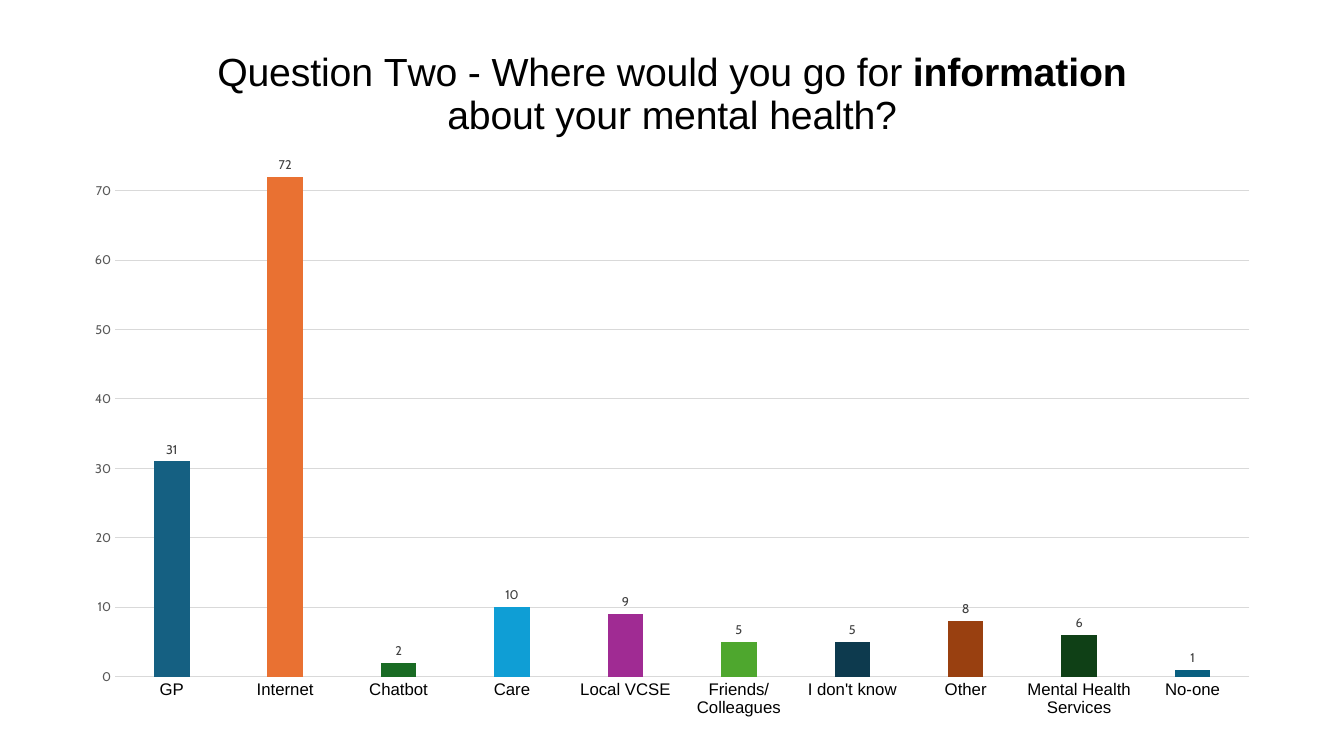
import pptx
import pptx.chart.data
import pptx.dml.color
import pptx.enum.chart
import pptx.oxml
import pptx.util

COLOURS = {
    "text": "000000",
    "tick": "595959",
    "value": "404040",
    "grid": "D9D9D9",
    "background": "FFFFFF",
}
ANSWERS = [
    ("GP", 31, "156082"),
    ("Internet", 72, "E97132"),
    ("Chatbot", 2, "196B24"),
    ("Care", 10, "0F9ED5"),
    ("Local VCSE", 9, "A02B93"),
    ("Friends/Colleagues", 5, "4EA72E"),
    ("I don't know", 5, "0D3A4E"),
    ("Other", 8, "994010"),
    ("Mental Health Services", 6, "0F4016"),
    ("No-one", 1, "095F80"),
]
QUESTION = [
    ("Question Two - Where would you go for ", False),
    ("information", True),
    (" about your mental health?", False),
]


class SurveySlide:
    body_font = "Cabin"
    heading_font = "Arial"

    def __init__(self, deck):
        self.slide = deck.slides.add_slide(deck.slide_layouts[6])
        self.paint(self.slide.background.fill, COLOURS["background"])

    def paint(self, fill, colour):
        fill.solid()
        fill.fore_color.rgb = pptx.dml.color.RGBColor.from_string(colour)

    def style_font(self, font, name, size, colour, bold=False):
        font.name = name
        font.size = pptx.util.Pt(size)
        font.bold = bold
        font.color.rgb = pptx.dml.color.RGBColor.from_string(COLOURS[colour])

    def style_line(self, line):
        self.paint(line.fill, COLOURS["grid"])
        line.width = pptx.util.Pt(0.75)

    def column_chart(self, left, top, width, height, answers):
        responses = pptx.chart.data.CategoryChartData()
        responses.categories = [name for name, _, _ in answers]
        responses.add_series("Series 1", [count for _, count, _ in answers])
        chart = self.slide.shapes.add_chart(
            pptx.enum.chart.XL_CHART_TYPE.COLUMN_CLUSTERED,
            *(pptx.util.Inches(n) for n in (left, top, width, height)),
            responses,
        ).chart
        chart.has_legend = False
        self.style_font(chart.font, self.body_font, 10, "text")
        self.columns(chart.plots[0], answers)
        self.axes(chart)
        return chart

    def columns(self, plot, answers):
        plot.gap_width = 219
        plot.overlap = -27
        plot.vary_by_categories = False
        for index, (_, _, colour) in enumerate(answers):
            self.paint(plot.series[0].points[index].format.fill, colour)
        plot.has_data_labels = True
        labels = plot.data_labels
        labels.show_value = True
        labels.position = pptx.enum.chart.XL_LABEL_POSITION.OUTSIDE_END
        self.style_font(labels.font, self.body_font, 9, "value")

    def axes(self, chart):
        answer_axis, count_axis = chart.category_axis, chart.value_axis
        for axis in (answer_axis, count_axis):
            axis.major_tick_mark = pptx.enum.chart.XL_TICK_MARK.NONE
            axis.minor_tick_mark = pptx.enum.chart.XL_TICK_MARK.NONE
        self.style_font(answer_axis.tick_labels.font, self.heading_font, 12, "text")
        self.style_line(answer_axis.format.line)
        self.style_font(count_axis.tick_labels.font, self.body_font, 9, "tick")
        count_axis.format.line.fill.background()
        count_axis.minimum_scale = 0
        count_axis.maximum_scale = 75
        count_axis.major_unit = 10
        count_axis.has_major_gridlines = True
        self.style_line(count_axis.major_gridlines.format.line)

    def chart_title(self, chart, parts):
        chart.has_title = True
        chart.chart_title.include_in_layout = False
        paragraph = chart.chart_title.text_frame.paragraphs[0]
        for text, bold in parts:
            run = paragraph.add_run()
            run.text = text
            self.style_font(run.font, self.heading_font, 28, "text", bold)

    def plot_layout(self, chart, x, y, w, h):
        plot_area = chart.plots[0]._element.getparent()
        for layout in plot_area.findall(pptx.oxml.ns.qn("c:layout")):
            plot_area.remove(layout)
        sizes = "".join(
            f'<c:{key} val="{value}"/>' for key, value in zip("xywh", (x, y, w, h))
        )
        plot_area.insert(0, pptx.oxml.parse_xml(
            f'<c:layout {pptx.oxml.ns.nsdecls("c")}><c:manualLayout>'
            '<c:layoutTarget val="inner"/><c:xMode val="edge"/><c:yMode val="edge"/>'
            f"{sizes}</c:manualLayout></c:layout>"
        ))


def main():
    deck = pptx.Presentation()
    deck.slide_width = pptx.util.Inches(13.33)
    deck.slide_height = pptx.util.Inches(7.5)
    survey = SurveySlide(deck)
    sources = survey.column_chart(0.7, 0.27, 11.93, 6.98, ANSWERS)
    survey.chart_title(sources, QUESTION)
    survey.plot_layout(sources, 0.037, 0.183, 0.943, 0.74)
    deck.save("out.pptx")


if __name__ == "__main__":
    main()
